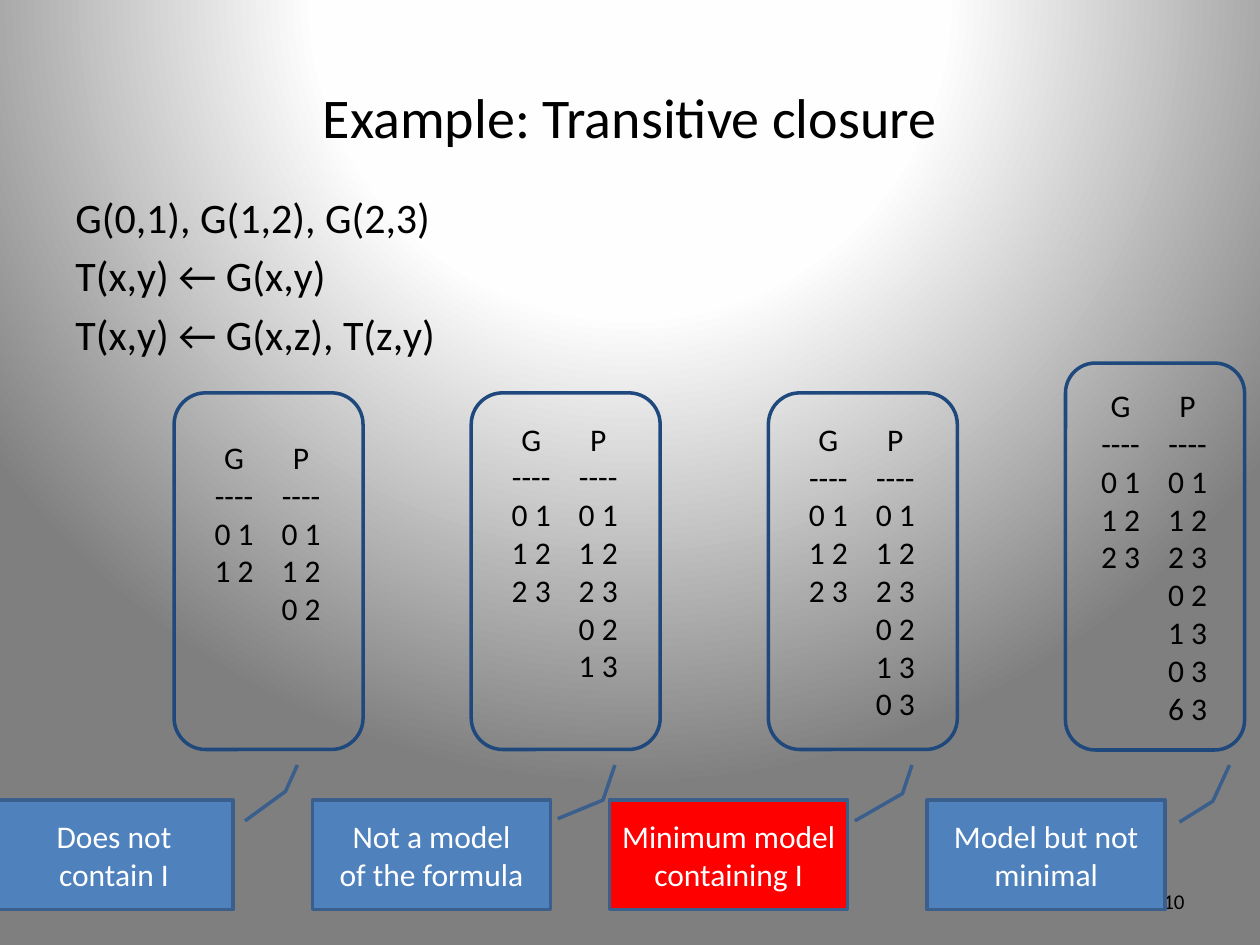
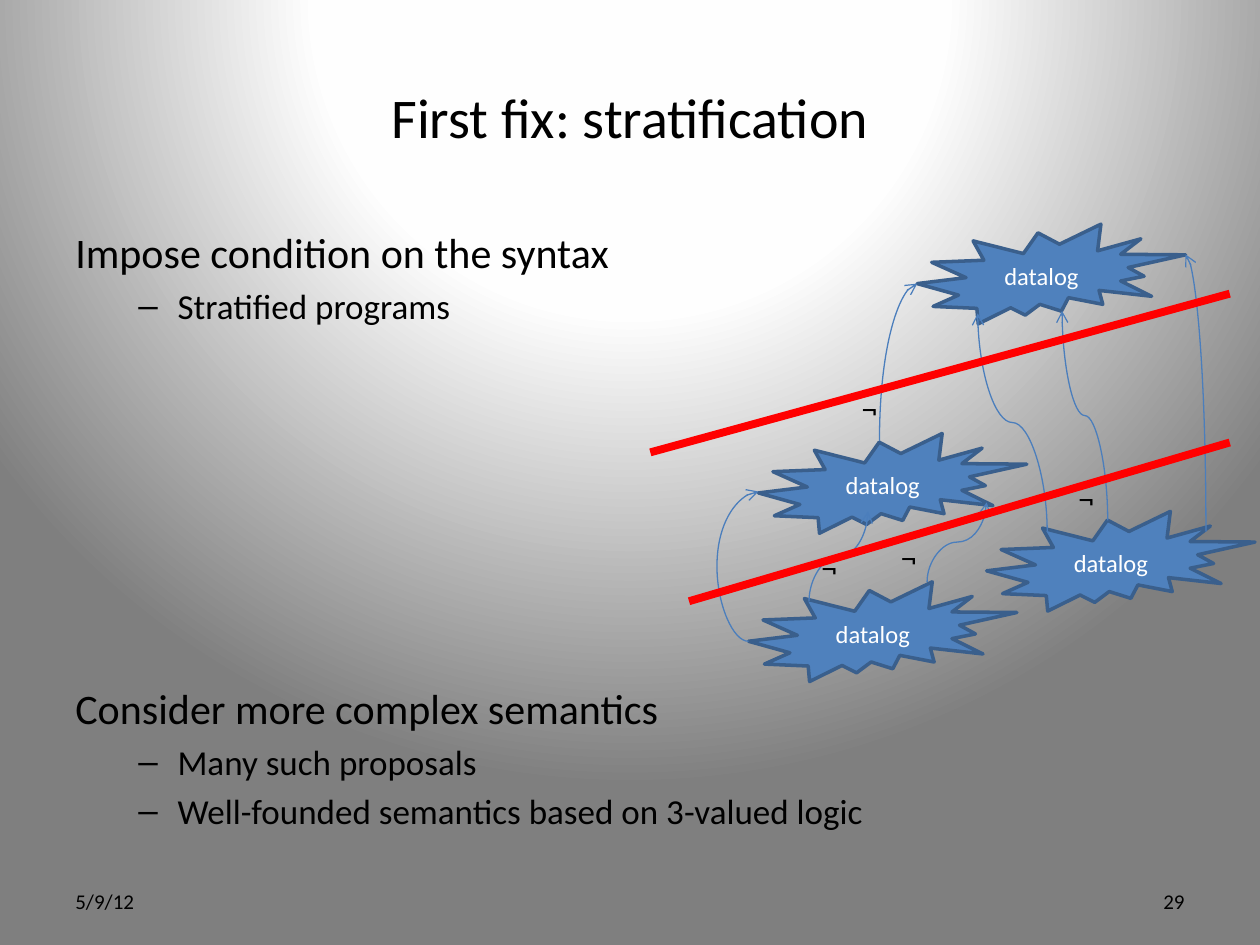
from dataclasses import dataclass

import lxml.etree
import pptx
import pptx.dml.color
import pptx.enum.shapes
import pptx.enum.text
import pptx.oxml
import pptx.oxml.ns
import pptx.util

Cm = pptx.util.Cm
Pt = pptx.util.Pt
qn = pptx.oxml.ns.qn
ALIGN = pptx.enum.text.PP_ALIGN
ANCHOR = pptx.enum.text.MSO_ANCHOR
SHAPE = pptx.enum.shapes.MSO_SHAPE
CONNECTOR = pptx.enum.shapes.MSO_CONNECTOR

# Shared look
FONT = "Calibri"
BLACK, WHITE, RED = "000000", "FFFFFF", "FF0000"
BLUE, BLUE_EDGE, NAVY, CURVE_BLUE = "4F81BD", "3A5F8C", "1F497D", "4B7EBC"
BACKDROP_STOPS = ((0, "FFFFFF"), (40, "FEFEFE"), (100, "7F7F7F"))
LINE_HEIGHT_CM = 0.775  # one 18 pt line
TITLE_ONLY = 5


@dataclass(frozen=True)
class Box:
    left: float
    top: float
    width: float
    height: float

    def lengths(self):
        return Cm(self.left), Cm(self.top), Cm(self.width), Cm(self.height)


@dataclass(frozen=True)
class Model:
    """A G/P table in a rounded frame, with the verdict below it."""
    frame: Box
    g_pairs: tuple
    p_pairs: tuple
    free_lines: int
    verdict: tuple
    verdict_left: float
    pointer: tuple
    fill: str = BLUE


@dataclass(frozen=True)
class Curve:
    begin: tuple
    end: tuple
    preset: str = "curvedConnector3"


TITLE_BOX = Box(1.27, 0.76, 22.86, 3.18)
DATE_BOX = Box(1.27, 17.65, 5.92, 1.02)
NUMBER_BOX = Box(18.21, 17.65, 5.92, 1.02)


# Helpers
def rgb(color: str):
    return pptx.dml.color.RGBColor.from_string(color)


def write(text_frame, text: str, *, size=18, color=BLACK, align=ALIGN.LEFT, space_before=0):
    """Put text in the empty first paragraph, or in a new one."""
    first = text_frame.paragraphs[0]
    paragraph = text_frame.add_paragraph() if first.runs else first
    paragraph.alignment = align
    paragraph.space_before = Pt(space_before)
    run = paragraph.add_run()
    run.text = text
    run.font.name, run.font.size = FONT, Pt(size)
    run.font.color.rgb = rgb(color)
    return paragraph


def add_text_box(slide, box: Box, anchor=ANCHOR.TOP, wrap=True):
    text_frame = slide.shapes.add_textbox(*box.lengths()).text_frame
    text_frame.word_wrap = wrap
    text_frame.vertical_anchor = anchor
    return text_frame


def add_shape(slide, kind, box: Box, *, fill=None, line=BLUE_EDGE):
    shape = slide.shapes.add_shape(kind, *box.lengths())
    shape.shadow.inherit = False
    if fill:
        shape.fill.solid()
        shape.fill.fore_color.rgb = rgb(fill)
    else:
        shape.fill.background()
    shape.line.color.rgb = rgb(line)
    shape.line.width = Pt(2)
    shape.text_frame.word_wrap = True
    shape.text_frame.vertical_anchor = ANCHOR.MIDDLE
    return shape


def add_line(slide, kind, begin, end, color: str, width: float):
    points = [Cm(value) for value in (*begin, *end)]
    connector = slide.shapes.add_connector(kind, *points)
    connector.line.color.rgb = rgb(color)
    connector.line.width = Pt(width)
    lxml.etree.SubElement(connector._element.spPr, qn("a:effectLst"))
    return connector


def add_curve(slide, begin, end, preset="curvedConnector3", bend=None):
    """Curved arrow; without a bend it leaves upwards, from a turned frame."""
    (x1, y1), (x2, y2) = begin, end
    if bend is None:
        width, height = abs(y2 - y1), abs(x2 - x1)
        left, top = (x1 + x2 - width) / 2, (y1 + y2 - height) / 2
        begin, end = (left, top), (left + width, top + height)
    connector = add_line(slide, CONNECTOR.CURVE, begin, end, CURVE_BLUE, 0.75)
    properties = connector._element.spPr
    geometry = properties.find(qn("a:prstGeom"))
    if bend is None:
        frame = properties.find(qn("a:xfrm"))
        rightward = x2 > x1
        frame.set("rot", str((90 if rightward else 270) * 60000))
        frame.set("flipV", "1")
        if rightward:
            frame.set("flipH", "1")
        geometry.set("prst", preset)
    else:
        guides = geometry.find(qn("a:avLst"))
        lxml.etree.SubElement(guides, qn("a:gd"), name="adj1", fmla=f"val {round(bend * 100000)}")
    line = properties.find(qn("a:ln"))
    lxml.etree.SubElement(line, qn("a:tailEnd"), type="arrow")


def set_backdrop(master):
    """Radial gradient, defined once for all slides."""
    master.background.fill.solid()
    stops = "".join(f'<a:gs pos="{place * 1000}"><a:srgbClr val="{color}"/></a:gs>'
                    for place, color in BACKDROP_STOPS)
    gradient = pptx.oxml.parse_xml(
        f'<a:gradFill {pptx.oxml.ns.nsdecls("a")} rotWithShape="1">'
        f'<a:gsLst>{stops}</a:gsLst><a:path path="circle">'
        '<a:fillToRect l="50000" t="-80000" r="50000" b="180000"/></a:path></a:gradFill>')
    properties = master._element.xpath(".//p:bgPr")[0]
    properties.replace(properties[0], gradient)


def add_slide(presentation, title: str, number: str, date: str = ""):
    slide = presentation.slides.add_slide(presentation.slide_layouts[TITLE_ONLY])
    shape = slide.shapes.title
    shape.left, shape.top, shape.width, shape.height = TITLE_BOX.lengths()
    shape.text_frame.vertical_anchor = ANCHOR.MIDDLE
    write(shape.text_frame, title, size=32, align=ALIGN.CENTER)
    if date:
        write(add_text_box(slide, DATE_BOX, ANCHOR.MIDDLE), date, size=12)
    write(add_text_box(slide, NUMBER_BOX, ANCHOR.MIDDLE), number, size=12, align=ALIGN.RIGHT)
    return slide


def add_body_line(text_frame, text: str, extra_space=0):
    write(text_frame, text, size=24, space_before=4.8 + extra_space)


def add_dash_line(text_frame, text: str):
    paragraph = write(text_frame, text, size=20, space_before=4)
    paragraph.level = 1
    properties = paragraph._p.get_or_add_pPr()
    properties.set("marL", str(Cm(2.06)))
    properties.set("indent", str(-Cm(0.79)))
    lxml.etree.SubElement(properties, qn("a:buFont"), typeface="Arial")
    lxml.etree.SubElement(properties, qn("a:buChar"), char="–")


# Slide: transitive closure
CHAIN = ("0 1", "1 2", "2 3")
MODEL_LEFTS = [3.51 + 5.99 * index for index in range(4)]
MODELS = (
    Model(Box(MODEL_LEFTS[0], 7.92, 3.81, 7.19), CHAIN[:2], (*CHAIN[:2], "0 2"), 2,
          ("Does not contain I",), -0.1, (0.19, 1.05, -0.08, 1.22)),
    Model(Box(MODEL_LEFTS[1], 7.92, 3.81, 7.19), CHAIN, (*CHAIN, "0 2", "1 3"), 1,
          ("Not a model", "of the formula"), 6.3, (0.17, 1.03, 0, 1.22)),
    Model(Box(MODEL_LEFTS[2], 7.92, 3.81, 7.19), CHAIN, (*CHAIN, "0 2", "1 3", "0 3"), 0,
          ("Minimum model", "containing I"), 12.29, (0.19, 1.03, -0.06, 1.23), RED),
    Model(Box(MODEL_LEFTS[3], 7.32, 3.61, 7.8), CHAIN, (*CHAIN, "0 2", "1 3", "0 3", "6 3"), 0,
          ("Model but not minimal",), 18.69, (0.2, 1.06, 0.01, 1.2)),
)


def add_model_table(slide, model: Model):
    shape = add_shape(slide, SHAPE.ROUNDED_RECTANGLE, model.frame, line=NAVY)
    text_frame = shape.text_frame
    text_frame.margin_bottom = Cm(0.13 + model.free_lines * LINE_HEIGHT_CM)
    # Centred tab stops on both sides of the frame's middle
    middle = model.frame.width / 2 - 0.05 * model.frame.width - 0.25
    g_column = ("G", "----", *model.g_pairs)
    p_column = ("P", "----", *model.p_pairs)
    for row, p_text in enumerate(p_column):
        g_text = g_column[row] if row < len(g_column) else ""
        paragraph = write(text_frame, f"\t{g_text}\t{p_text}")
        tabs = lxml.etree.SubElement(paragraph._p.get_or_add_pPr(), qn("a:tabLst"))
        for offset in (-0.69, 0.66):
            lxml.etree.SubElement(tabs, qn("a:tab"), pos=str(Cm(middle + offset)), algn="ctr")


def add_verdict(slide, model: Model):
    box = Box(model.verdict_left, 16.13, 4.8, 2.21)
    shape = add_shape(slide, SHAPE.LINE_CALLOUT_2, box, fill=model.fill)
    for index, value in enumerate((*model.pointer, -0.32, 1.27)):
        shape.adjustments[index] = value
    for text in model.verdict:
        write(shape.text_frame, text, color=WHITE, align=ALIGN.CENTER)


def build_closure_slide(presentation):
    slide = add_slide(presentation, "Example: Transitive closure", "10")
    body = add_text_box(slide, Box(1.27, 3.73, 22.86, 12.57))
    for text in ("G(0,1), G(1,2), G(2,3)", "T(x,y) ← G(x,y)", "T(x,y) ← G(x,z), T(z,y)"):
        add_body_line(body, text)
    for model in MODELS:
        add_model_table(slide, model)
        add_verdict(slide, model)


# Slide: stratification
PROGRAM_CORNERS = ((15.09, 11.73), (19.89, 10.31), (15.29, 8.74), (18.49, 4.52))
NEGATION_CORNERS = ((17.12, 7.72), (17.91, 10.72), (16.31, 10.92), (21.49, 9.53))
DEPENDENCIES = (
    Curve((16.31, 12.12), (17.5, 10.31)),
    Curve((18.69, 11.73), (19.89, 10.13)),
    Curve((22.33, 10.49), (21.41, 6.27)),
    Curve((21.11, 10.72), (19.71, 6.32)),
    Curve((24.31, 10.72), (23.9, 5.13), "curvedConnector2"),
    Curve((17.73, 8.89), (18.49, 5.72), "curvedConnector2"),
)
STRATUM_BORDERS = (((13.89, 12.12), (24.79, 8.92)), ((13.11, 9.12), (24.79, 5.92)))


def build_stratification_slide(presentation):
    slide = add_slide(presentation, "First fix: stratification", "29", "5/9/12")
    body = add_text_box(slide, Box(1.27, 4.45, 22.86, 12.57))
    add_body_line(body, "Impose condition on the syntax")
    add_dash_line(body, "Stratified programs")
    add_body_line(body, "Consider more complex semantics", extra_space=199)
    add_dash_line(body, "Many such proposals")
    add_dash_line(body, "Well-founded semantics based on 3-valued logic")

    for left, top in PROGRAM_CORNERS:
        shape = add_shape(slide, SHAPE.EXPLOSION2, Box(left, top, 5.41, 2.01), fill=BLUE)
        write(shape.text_frame, "datalog", size=14, color=WHITE, align=ALIGN.CENTER)
    for curve in DEPENDENCIES:
        add_curve(slide, curve.begin, curve.end, curve.preset)
    add_curve(slide, (15.09, 12.93), (15.29, 9.91), bend=-3.18)
    for left, top in NEGATION_CORNERS:
        write(add_text_box(slide, Box(left, top, 0.97, 1.02), wrap=False), "¬")
    for begin, end in STRATUM_BORDERS:
        add_line(slide, CONNECTOR.STRAIGHT, begin, end, RED, 4.5)


def main():
    presentation = pptx.Presentation()
    presentation.slide_width, presentation.slide_height = Cm(25.4), Cm(19.05)
    set_backdrop(presentation.slide_master)
    build_closure_slide(presentation)
    build_stratification_slide(presentation)
    presentation.save("out.pptx")


if __name__ == "__main__":
    main()
